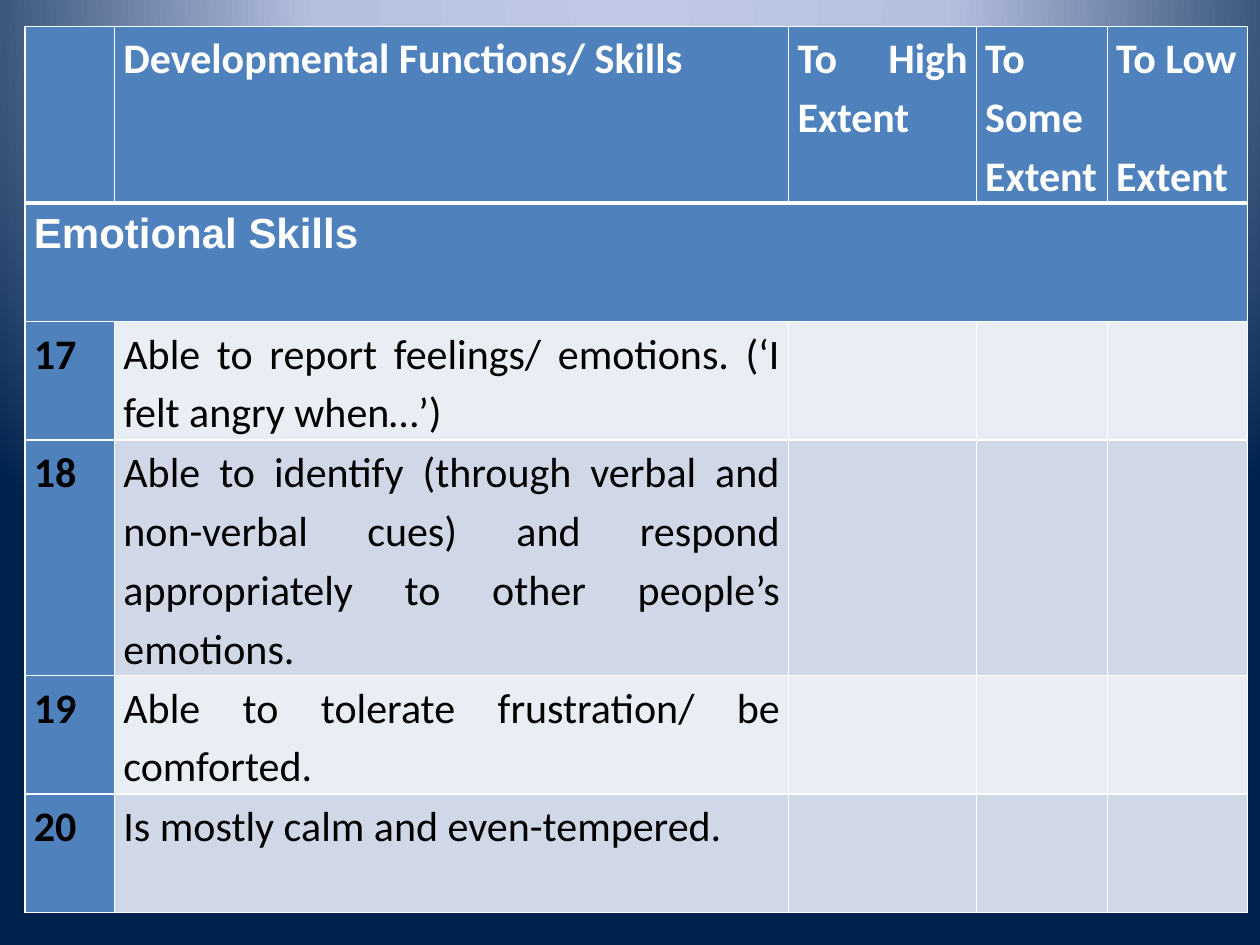
import pptx
import pptx.dml.color
import pptx.enum.text
import pptx.oxml
import pptx.oxml.ns
import pptx.util
from pptx.util import Inches

BLUE, PALE, PALER = "4F81BD", "D0D8E8", "E9EDF4"
WHITE, BLACK = "FFFFFF", "000000"
FONT_SIZE = pptx.util.Pt(24)

COLUMN_WIDTHS = [0.71, 5.35, 1.49, 1.04, 1.11]
ROW_HEIGHT = 0.94
HEADINGS = ["", "Developmental Functions/ Skills", "To High Extent",
            "To Some Extent", "To Low\nExtent"]
SECTION = "Emotional Skills"
FIRST_NUMBER = 17
SKILLS = [
    "Able to report feelings/ emotions. (‘I felt angry when…’)",
    "Able to identify (through verbal and non-verbal cues) and respond "
    "appropriately to other people’s emotions.",
    "Able to tolerate frustration/ be comforted.",
    "Is mostly calm and even-tempered.",
]


def rgb(value):
    return pptx.dml.color.RGBColor.from_string(value)


def paint_background(slide):
    """Give the slide a round gradient centred above its top edge."""
    stops = [(0, "BFC9E5"), (40, "B5C0E0"), (100, "00234D")]
    stop_xml = "".join(
        f'<a:gs pos="{position * 1000}"><a:srgbClr val="{color}"/></a:gs>'
        for position, color in stops)
    background = pptx.oxml.parse_xml(
        f'<p:bg {pptx.oxml.ns.nsdecls("p", "a")}><p:bgPr>'
        f'<a:gradFill rotWithShape="1"><a:gsLst>{stop_xml}</a:gsLst>'
        '<a:path path="circle"><a:fillToRect l="50000" t="-80000" '
        'r="50000" b="180000"/></a:path></a:gradFill>'
        '<a:effectLst/></p:bgPr></p:bg>')
    slide.element.cSld.insert(0, background)


def style_cell(cell, fill, top=1, bottom=1):
    """Set the fill, the margins and the white borders, given in points."""
    properties = cell._tc.get_or_add_tcPr()
    for side, width in (("L", 1), ("R", 1), ("T", top), ("B", bottom)):
        properties.append(pptx.oxml.parse_xml(
            f'<a:ln{side} {pptx.oxml.ns.nsdecls("a")} '
            f'w="{pptx.util.Pt(width)}"><a:solidFill>'
            f'<a:srgbClr val="{WHITE}"/></a:solidFill></a:ln{side}>'))
    cell.fill.solid()
    cell.fill.fore_color.rgb = rgb(fill)
    cell.margin_left = cell.margin_right = Inches(0.07)
    cell.margin_top = cell.margin_bottom = 0


def write_cell(cell, text, color, bold=True, font="Calibri"):
    cell.text_frame.text = text
    for paragraph in cell.text_frame.paragraphs:
        paragraph.alignment = pptx.enum.text.PP_ALIGN.JUSTIFY
        paragraph.line_spacing = 1.15
        for run in paragraph.runs:
            run.font.name = font
            run.font.size = FONT_SIZE
            run.font.bold = bold
            run.font.color.rgb = rgb(color)


def add_skills_table(slide, left, top, width, height):
    row_count = len(SKILLS) + 2
    table = slide.shapes.add_table(
        row_count, len(COLUMN_WIDTHS), left, top, width, height).table
    table.first_row = table.horz_banding = False
    for column, share in zip(table.columns, COLUMN_WIDTHS):
        column.width = int(width * share / sum(COLUMN_WIDTHS))
    for row in table.rows:
        row.height = height // row_count

    for column, heading in enumerate(HEADINGS):
        cell = table.cell(0, column)
        style_cell(cell, BLUE, bottom=3)
        if heading:
            write_cell(cell, heading, WHITE)
        style_cell(table.cell(1, column), BLUE, top=3)
    low_extent = table.cell(0, len(HEADINGS) - 1).text_frame.paragraphs[-1]
    low_extent.space_before = pptx.util.Pt(33.6)

    section = table.cell(1, 0)
    section.merge(table.cell(1, len(HEADINGS) - 1))
    write_cell(section, SECTION, WHITE, font="Arial")

    for index, skill in enumerate(SKILLS):
        row = index + 2
        band = PALE if index % 2 else PALER
        for column in range(len(COLUMN_WIDTHS)):
            style_cell(table.cell(row, column), band if column else BLUE)
        write_cell(table.cell(row, 0), str(FIRST_NUMBER + index), BLACK)
        write_cell(table.cell(row, 1), skill, BLACK, bold=False)


def main():
    presentation = pptx.Presentation()
    presentation.slide_width = Inches(10)
    presentation.slide_height = Inches(7.5)
    slide = presentation.slides.add_slide(presentation.slide_layouts[6])
    paint_background(slide)
    add_skills_table(slide, Inches(0.2), Inches(0.21),
                     Inches(sum(COLUMN_WIDTHS)),
                     Inches(ROW_HEIGHT * (len(SKILLS) + 2)))
    presentation.save("out.pptx")


if __name__ == "__main__":
    main()
